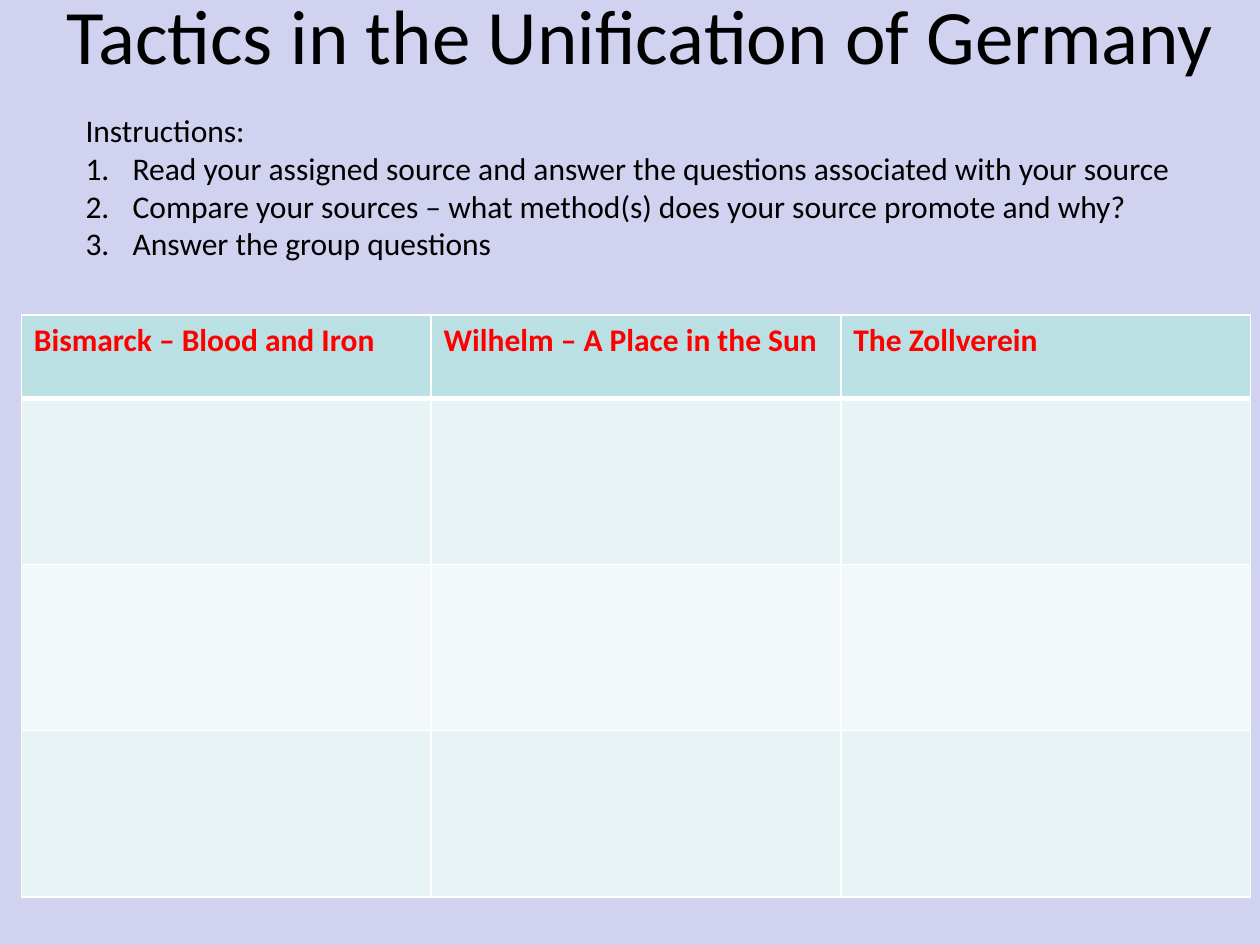
import pptx
import pptx.util
import pptx.dml.color
import pptx.enum.text
import pptx.oxml.ns
from lxml import etree
from pptx.util import Cm, Pt

# Content
TITLE = "Tactics in the Unification of Germany"
INTRO = "Instructions:"
STEPS = [
    "Read your assigned source and answer the questions associated with your source",
    "Compare your sources – what method(s) does your source promote and why?",
    "Answer the group questions",
]
HEADERS = ["Bismarck – Blood and Iron", "Wilhelm – A Place in the Sun", "The Zollverein"]

# Layout and formats
TITLE_BOX = (0.43, 0, 24.97, 1.35)
STEPS_BOX = (1.47, 2.11, 22.78, 3.33)
TABLE_LEFT, TABLE_TOP, COL_WIDTH = 0.43, 6.35, 8.26
ROW_HEIGHTS = [1.68, 3.35, 3.35, 3.35]
ROW_FILLS = ["BBE0E3", "E7F3F4", "F3F9FA", "E7F3F4"]
INDENT = Cm(0.95)
TITLE_FONT = {"name": "Calibri", "size": Pt(44)}
BODY_FONT = {"name": "Calibri", "size": Pt(18)}
HEADER_FONT = {"name": "Calibri", "size": Pt(18), "bold": True}


def rgb(value):
    return pptx.dml.color.RGBColor.from_string(value)


def add_text(p, text, font, color="000000"):
    r = p.add_run()
    r.text = text
    for name, value in font.items():
        setattr(r.font, name, value)
    r.font.color.rgb = rgb(color)


def place(sp, box):
    for name, value in zip(("left", "top", "width", "height"), box):
        setattr(sp, name, Cm(value))


def child(parent, tag, **attrs):
    return etree.SubElement(parent, pptx.oxml.ns.qn(tag), attrs)


def set_bullet(p, numbered):
    pPr = p._p.get_or_add_pPr()
    pPr.set("marL", str(INDENT if numbered else 0))
    pPr.set("indent", str(-INDENT if numbered else 0))
    if numbered:
        child(pPr, "a:buFont", typeface="+mj-lt")
        child(pPr, "a:buAutoNum", type="arabicPeriod")
    else:
        child(pPr, "a:buNone")


def set_borders(cell, widths):
    tcPr = cell._tc.get_or_add_tcPr()
    for side, width in widths.items():
        ln = child(tcPr, f"a:ln{side}", w=str(Pt(width)))
        child(child(ln, "a:solidFill"), "a:srgbClr", val="FFFFFF")


prs = pptx.Presentation()
prs.slide_width, prs.slide_height = Cm(25.4), Cm(19.05)
s = prs.slides.add_slide(prs.slide_layouts[1])
s.background.fill.solid()
s.background.fill.fore_color.rgb = rgb("D1D1F0")

# Title
title = s.shapes.title
place(title, TITLE_BOX)
tf = title.text_frame
tf.auto_size = pptx.enum.text.MSO_AUTO_SIZE.NONE
tf.vertical_anchor = pptx.enum.text.MSO_ANCHOR.MIDDLE
tf.paragraphs[0].alignment = pptx.enum.text.PP_ALIGN.CENTER
add_text(tf.paragraphs[0], TITLE, TITLE_FONT)

# Instructions
body = s.placeholders[1]
place(body, STEPS_BOX)
tf = body.text_frame
tf.word_wrap = True
tf.auto_size = pptx.enum.text.MSO_AUTO_SIZE.SHAPE_TO_FIT_TEXT
for i, text in enumerate([INTRO] + STEPS):
    p = tf.add_paragraph() if i else tf.paragraphs[0]
    p.space_before = Pt(0)
    set_bullet(p, numbered=i > 0)
    add_text(p, text, BODY_FONT)

# Table of sources
table = s.shapes.add_table(
    len(ROW_HEIGHTS), len(HEADERS), Cm(TABLE_LEFT), Cm(TABLE_TOP),
    Cm(COL_WIDTH * len(HEADERS)), Cm(sum(ROW_HEIGHTS))).table
for col in table.columns:
    col.width = Cm(COL_WIDTH)
for i, (height, fill) in enumerate(zip(ROW_HEIGHTS, ROW_FILLS)):
    table.rows[i].height = Cm(height)
    for cell in table.rows[i].cells:
        set_borders(cell, {"L": 1, "R": 1, "T": 3 if i == 1 else 1, "B": 3 if i == 0 else 1})
        cell.fill.solid()
        cell.fill.fore_color.rgb = rgb(fill)
for cell, text in zip(table.rows[0].cells, HEADERS):
    add_text(cell.text_frame.paragraphs[0], text, HEADER_FONT, "FF0000")

prs.save("out.pptx")
